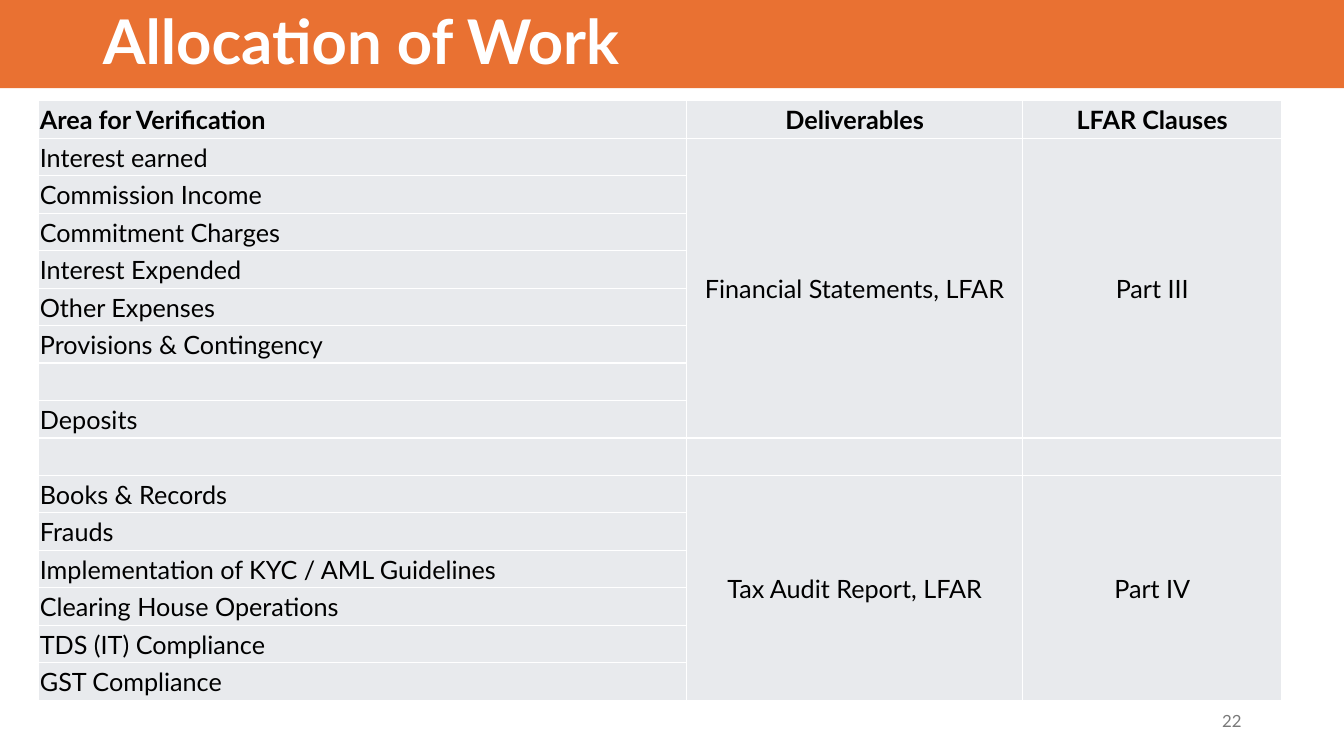
from lxml import etree
from pptx import Presentation
from pptx.dml.color import RGBColor
from pptx.enum.shapes import MSO_SHAPE
from pptx.enum.text import MSO_ANCHOR, PP_ALIGN
from pptx.oxml.ns import qn
from pptx.util import Pt

PX = 9525
LEFT, CENTER, RIGHT = PP_ALIGN.LEFT, PP_ALIGN.CENTER, PP_ALIGN.RIGHT
MIDDLE = MSO_ANCHOR.MIDDLE
RECTANGLE = MSO_SHAPE.RECTANGLE
FONT = "Lato"
COLORS = {
    "banner": "E97132",
    "cell": "E8EAED",
    "white": "FFFFFF",
    "black": "000000",
    "page": "797979",
}

COLUMN_WIDTHS = [617, 320, 247]
HEADINGS = ["Area for Verification", "Deliverables", "LFAR Clauses"]
AREAS = [
    "Interest earned", "Commission Income", "Commitment Charges",
    "Interest Expended", "Other Expenses", "Provisions & Contingency",
    "", "Deposits", "",
    "Books & Records", "Frauds", "Implementation of KYC / AML Guidelines",
    "Clearing House Operations", "TDS (IT) Compliance", "GST Compliance",
]
# first row, last row, deliverable, clause
GROUPS = [
    (1, 8, "Financial Statements, LFAR", "Part III"),
    (10, 15, "Tax Audit Report, LFAR", "Part IV"),
]


def px(length):
    return round(length * PX)


def rgb(name):
    return RGBColor.from_string(COLORS[name])


def write(frame, text, size=18, color="black", bold=False, align=LEFT, spacing=1.0):
    paragraph = frame.paragraphs[0]
    paragraph.alignment = align
    paragraph.line_spacing = spacing
    run = paragraph.add_run()
    run.text = text
    run.font.name = FONT
    run.font.size = Pt(size)
    run.font.bold = bold
    run.font.color.rgb = rgb(color)


def add_banner(slide, left, top, width, height):
    banner = slide.shapes.add_shape(RECTANGLE, px(left), px(top), px(width), px(height))
    banner.shadow.inherit = False
    banner.fill.solid()
    banner.fill.fore_color.rgb = rgb("banner")
    banner.line.fill.background()
    frame = banner.text_frame
    frame.margin_left = px(98)
    frame.vertical_anchor = MIDDLE
    write(frame, "Allocation of Work", size=44, color="white", bold=True, spacing=0.9)


def style_cell(cell):
    cell.margin_left = cell.margin_right = cell.margin_top = px(1)
    cell.margin_bottom = 0
    cell.vertical_anchor = MIDDLE
    properties = cell._tc.get_or_add_tcPr()
    for side in ("lnL", "lnR", "lnT", "lnB"):
        border = etree.SubElement(properties, qn(f"a:{side}"), w=str(Pt(1)))
        line_fill = etree.SubElement(border, qn("a:solidFill"))
        etree.SubElement(line_fill, qn("a:srgbClr"), val=COLORS["white"])
    cell.fill.solid()
    cell.fill.fore_color.rgb = rgb("cell")


def add_allocation_table(slide, left, top, width, height):
    row_count = len(AREAS) + 1
    table = slide.shapes.add_table(
        row_count, len(HEADINGS), px(left), px(top), px(width), px(height)).table
    table.first_row = table.horz_banding = False
    for column, column_width in zip(table.columns, COLUMN_WIDTHS):
        column.width = px(column_width)
    for row in table.rows:
        row.height = px(height / row_count)
        for cell in row.cells:
            style_cell(cell)

    for column, heading in enumerate(HEADINGS):
        write(table.cell(0, column).text_frame, heading, bold=True,
              align=CENTER if column else LEFT)
    for row, area in enumerate(AREAS, start=1):
        write(table.cell(row, 0).text_frame, area)
    for first, last, *entries in GROUPS:
        for column, entry in enumerate(entries, start=1):
            group = table.cell(first, column)
            group.merge(table.cell(last, column))
            write(group.text_frame, entry, align=CENTER)


def add_page_number(slide, left, top, width, height):
    frame = slide.shapes.add_textbox(px(left), px(top), px(width), px(height)).text_frame
    frame.word_wrap = True
    frame.vertical_anchor = MIDDLE
    write(frame, "22", size=12, color="page", align=RIGHT)


def main():
    deck = Presentation()
    deck.slide_width, deck.slide_height = px(1280), px(720)
    slide = deck.slides.add_slide(deck.slide_layouts[6])
    add_banner(slide, 0, 0, 1280, 84)
    add_page_number(slide, 904, 667, 288, 38)
    add_allocation_table(slide, 37, 96, sum(COLUMN_WIDTHS), 571)
    deck.save("out.pptx")


if __name__ == "__main__":
    main()
